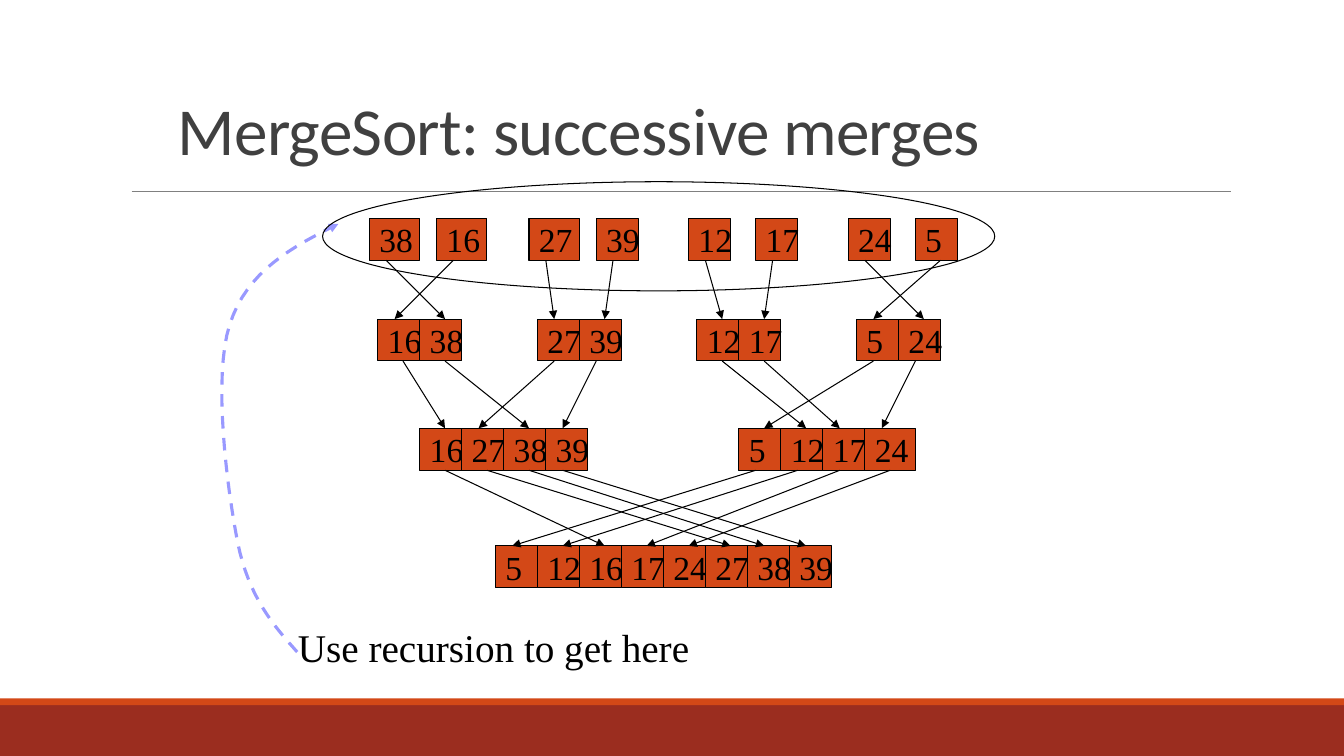
import lxml.etree
import pptx
import pptx.dml.color
import pptx.enum.dml
import pptx.enum.shapes
import pptx.enum.text
import pptx.oxml.ns
import pptx.util

Cm = pptx.util.Cm
Pt = pptx.util.Pt
SHAPE = pptx.enum.shapes.MSO_SHAPE
ANCHOR = pptx.enum.text.MSO_ANCHOR

ORANGE, BRICK, BLACK, LILAC = "D34817", "9B2D1F", "000000", "9999FF"
SERIF = "Times New Roman"

# Distances in the diagram count grid steps of a twelfth of 2.54 cm.
CELL = 5
WIDE_CELL = 6
# Each level: top, lists as (left, numbers).
LEVELS = [
    (0, [(0, [38]), (8, [16]), (19, [27]), (27, [39]),
         (38, [12]), (46, [17]), (57, [24]), (65, [5])]),
    (12, [(1, [16, 38]), (20, [27, 39]), (39, [12, 17]), (58, [5, 24])]),
    (25, [(6, [16, 27, 38, 39]), (44, [5, 12, 17, 24])]),
    (39, [(15, [5, 12, 16, 17, 24, 27, 38, 39])]),
]
WIDE_NUMBERS = [(38, 16, 27), (), (16, 24), ()]
# Arrows from each level to the next, as (start, end) across.
MERGES = [
    [(2, 9), (10, 3), (21, 22), (29, 28), (40, 42), (48, 47), (59, 66), (68, 60)],
    [(4, 9), (9, 19), (22, 13), (27, 23), (60, 47), (42, 52), (65, 61), (47, 56)],
    [(46, 17), (51, 23), (9, 28), (56, 33), (62, 38), (14, 43), (19, 47), (23, 52)],
]
# Bezier pieces of the recursion arrow, in cm from its box corner.
RECURSION_CURVE = [
    [(2.13, 10.79), (1.52, 10.11), (0.91, 9.4), (0.63, 8.03)],
    [(0.63, 8.03), (0.36, 6.65), (0, 3.86), (0.43, 2.54)],
    [(0.43, 2.54), (0.86, 1.19), (2.01, 0.58), (3.17, 0)],
]
CURVE_STEPS = 16


def grid(steps):
    return Cm(steps * 2.54 / 12)


def color(hex_code):
    return pptx.dml.color.RGBColor.from_string(hex_code)


def style_line(line, hex_code, width):
    line.color.rgb = color(hex_code)
    line.width = Pt(width)


def add_arrowhead(line):
    lxml.etree.SubElement(line._get_or_add_ln(), pptx.oxml.ns.qn("a:tailEnd"), type="triangle")


def add_shape(slide, kind, box, fill=None, outline=None):
    shape = slide.shapes.add_shape(kind, *box)
    shape.shadow.inherit = False
    if fill:
        shape.fill.solid()
        shape.fill.fore_color.rgb = color(fill)
    else:
        shape.fill.background()
    if outline:
        style_line(shape.line, outline, 0.75)
    else:
        shape.line.fill.background()
    return shape


def add_straight(slide, start, end, hex_code, width):
    connector = slide.shapes.add_connector(
        pptx.enum.shapes.MSO_CONNECTOR.STRAIGHT, *start, *end)
    style_line(connector.line, hex_code, width)
    lxml.etree.SubElement(connector._element.spPr, pptx.oxml.ns.qn("a:effectLst"))
    return connector


def write(shape, text, font, size, hex_code, anchor, wrap=False):
    frame = shape.text_frame
    frame.text = text
    frame.word_wrap = wrap
    frame.vertical_anchor = anchor
    paragraph = frame.paragraphs[0]
    paragraph.alignment = pptx.enum.text.PP_ALIGN.LEFT
    run = paragraph.runs[0]
    run.font.name = font
    run.font.size = Pt(size)
    run.font.color.rgb = color(hex_code)
    return paragraph


def add_footer_bands(slide, left, top, width, height):
    stripe = Cm(0.17)
    add_shape(slide, SHAPE.RECTANGLE, (left, top + stripe, width, height - stripe), BRICK)
    add_shape(slide, SHAPE.RECTANGLE, (left, top, width, stripe), ORANGE)


def add_title(slide, left, top, width, height):
    rule_top = top + height + Cm(0.43)
    rule_left = left - Cm(0.91)
    add_straight(slide, (rule_left, rule_top), (rule_left + Cm(27.69), rule_top), "808080", 0.5)
    title = slide.shapes.add_textbox(left, top, width, height)
    paragraph = write(title, "MergeSort: successive merges", "Calibri", 48, "404040",
                      ANCHOR.BOTTOM, wrap=True)
    paragraph.line_spacing = 0.85
    paragraph.runs[0].font._element.set("spc", "-50")


def add_merge_levels(slide, left, top):
    for (level_top, lists), wide in zip(LEVELS, WIDE_NUMBERS):
        for list_left, numbers in lists:
            for place, number in enumerate(numbers):
                box = (left + grid(list_left + place * CELL), top + grid(level_top),
                       grid(WIDE_CELL if number in wide else CELL), grid(CELL))
                cell = add_shape(slide, SHAPE.RECTANGLE, box, ORANGE, BLACK)
                write(cell, str(number), SERIF, 24, BLACK, ANCHOR.MIDDLE)
    for (upper, _), (lower, _), merges in zip(LEVELS, LEVELS[1:], MERGES):
        for start, end in merges:
            arrow = add_straight(slide, (left + grid(start), top + grid(upper + CELL)),
                                 (left + grid(end), top + grid(lower)), BLACK, 0.75)
            add_arrowhead(arrow.line)


def bezier_point(piece, t):
    weights = ((1 - t) ** 3, 3 * t * (1 - t) ** 2, 3 * t ** 2 * (1 - t), t ** 3)
    return [sum(w * point[axis] for w, point in zip(weights, piece)) for axis in (0, 1)]


def add_recursion_note(slide, left, top):
    """Place the caption, the dashed arrow and the ring around the first level."""
    caption = slide.shapes.add_textbox(left + Cm(1.9), top + Cm(9.93), Cm(10.46), Cm(1.45))
    write(caption, "Use recursion to get here", SERIF, 28, BLACK, ANCHOR.TOP)

    points = [bezier_point(piece, step / CURVE_STEPS)
              for piece in RECURSION_CURVE for step in range(CURVE_STEPS + 1)]
    corners = [(left + Cm(x), top + Cm(y)) for x, y in points]
    builder = slide.shapes.build_freeform(*corners[0])
    builder.add_line_segments(corners[1:], close=False)
    curve = builder.convert_to_shape()
    curve.shadow.inherit = False
    curve.fill.background()
    style_line(curve.line, LILAC, 2.25)
    curve.line.dash_style = pptx.enum.dml.MSO_LINE.DASH
    add_arrowhead(curve.line)

    ring = (left + Cm(2.77), top - Cm(1.06), Cm(16.94), Cm(2.75))
    add_shape(slide, SHAPE.OVAL, ring, outline=BLACK)


def main():
    deck = pptx.Presentation()
    deck.slide_width, deck.slide_height = Cm(33.87), Cm(19.05)
    slide = deck.slides.add_slide(deck.slide_layouts[6])
    add_footer_bands(slide, 0, Cm(17.6), deck.slide_width, Cm(1.45))
    add_title(slide, Cm(4.23), Cm(1.22), Cm(25.4), Cm(3.18))
    add_merge_levels(slide, Cm(9.31), Cm(5.5))
    add_recursion_note(slide, Cm(5.36), Cm(5.64))
    deck.save("out.pptx")


if __name__ == "__main__":
    main()
